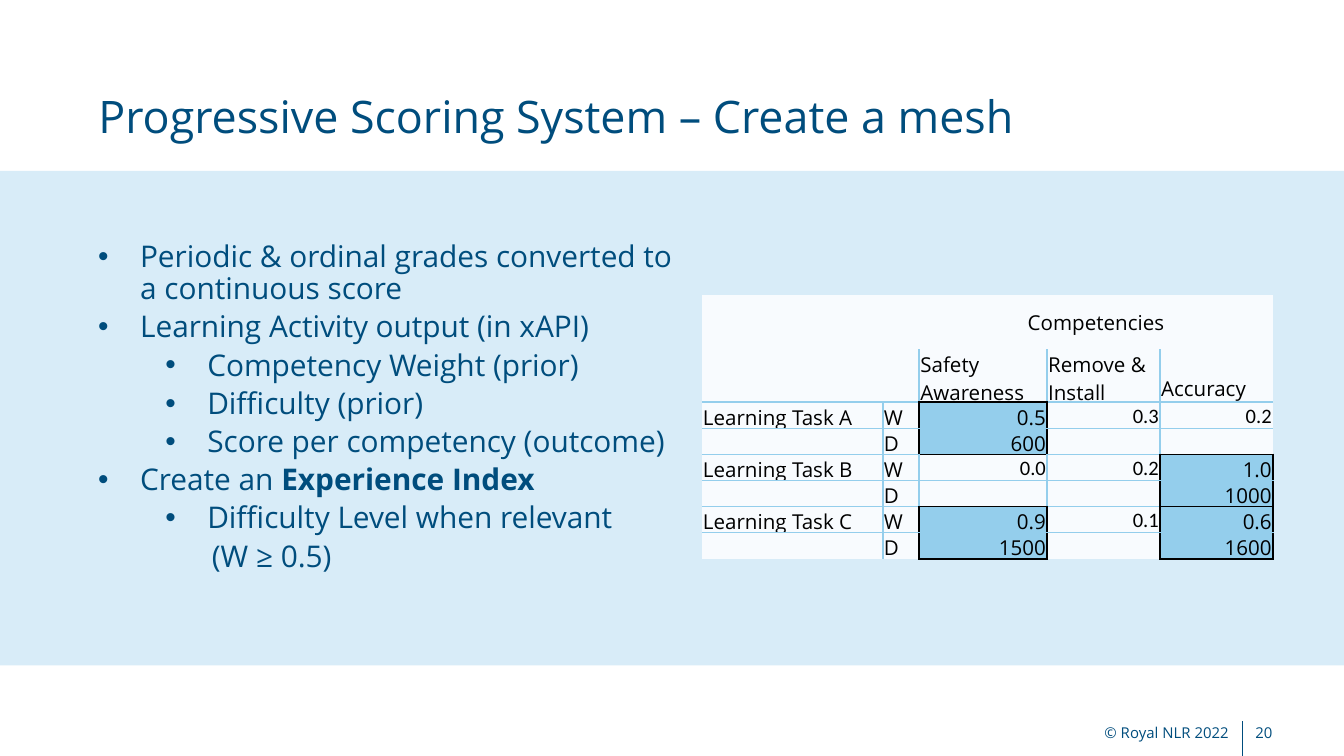
from lxml import etree
from pptx import Presentation
from pptx.dml.color import RGBColor
from pptx.enum.shapes import MSO_CONNECTOR, MSO_SHAPE
from pptx.enum.text import MSO_ANCHOR, PP_ALIGN
from pptx.oxml.ns import qn
from pptx.util import Pt

RECTANGLE = MSO_SHAPE.RECTANGLE
STRAIGHT = MSO_CONNECTOR.STRAIGHT
TOP, MIDDLE, BOTTOM = MSO_ANCHOR.TOP, MSO_ANCHOR.MIDDLE, MSO_ANCHOR.BOTTOM
LEFT, CENTER, RIGHT = PP_ALIGN.LEFT, PP_ALIGN.CENTER, PP_ALIGN.RIGHT

FONT, NUMBER_FONT = "Open Sans", "Calibri"
NAVY, BAND, BLACK = "004D7D", "D8ECF8", "000000"
CELL, HIGHLIGHT = "F8FBFE", "94CEEC"
TABLE_SIZE = 11

BULLETS = [
    (0, [("Periodic & ordinal grades converted to a continuous score", False)]),
    (0, [("Learning Activity output (in xAPI)", False)]),
    (1, [("Competency Weight (prior)", False)]),
    (1, [("Difficulty (prior)", False)]),
    (1, [("Score per competency (outcome)", False)]),
    (0, [("Create an ", False), ("Experience Index", True)]),
    (1, [("Difficulty Level when relevant", False)]),
    (None, [("(W ≥ 0.5)", False)]),
]
BULLET_INDENTS = {0: 22.5, 1: 58.5}
CONTINUATION_INDENT = 61

COLUMN_WIDTHS = [97, 19.5, 68.5, 60.5, 60.5]
ROW_HEIGHTS = [29, 28.5] + [14] * 6
ROWS = [
    ["", "", "Competencies", "", ""],
    ["", "", "Safety Awareness", "Remove & Install", "Accuracy"],
    ["Learning Task A", "W", "0.5", "0.3", "0.2"],
    ["", "D", "600", "", ""],
    ["Learning Task B", "W", "0.0", "0.2", "1.0"],
    ["", "D", "", "", "1000"],
    ["Learning Task C", "W", "0.9", "0.1", "0.6"],
    ["", "D", "1500", "", "1600"],
]
RELEVANT = {(1, 2), (2, 4), (3, 2), (3, 4)}
SIDES = {"lnL": (0, -1), "lnR": (0, 1), "lnT": (-1, 0), "lnB": (1, 0)}


def color(value):
    """Return the colour for a hex string."""
    return RGBColor.from_string(value)


def add_run(paragraph, text, size, fill=NAVY, font=FONT, bold=False):
    """Add one formatted run to a paragraph."""
    run = paragraph.add_run()
    run.text = text
    run.font.size = Pt(size)
    run.font.name = font
    run.font.bold = bold
    run.font.color.rgb = color(fill)


def add_band(slide):
    """Add the pale band behind the content."""
    shape = slide.shapes.add_shape(RECTANGLE, Pt(0), Pt(91.5), Pt(720), Pt(265))
    shape.shadow.inherit = False
    shape.fill.solid()
    shape.fill.fore_color.rgb = color(BAND)
    shape.line.fill.background()


def add_footer_line(slide):
    """Add the thin divider of the footer."""
    line = slide.shapes.add_connector(STRAIGHT, Pt(665.5), Pt(386.5), Pt(665.5), Pt(405))
    line.line.color.rgb = color(NAVY)
    line.line.width = Pt(0.25)
    etree.SubElement(line._element.spPr, qn("a:effectLst"))


def add_text_box(slide, left, top, width, height, anchor):
    """Add a wrapping text box and return its text frame."""
    shape = slide.shapes.add_textbox(Pt(left), Pt(top), Pt(width), Pt(height))
    shape.text_frame.word_wrap = True
    shape.text_frame.vertical_anchor = anchor
    return shape.text_frame


def add_footer(slide, text, left, width, alignment):
    """Add one footer text."""
    paragraph = add_text_box(slide, left, 381.5, width, 21.5, MIDDLE).paragraphs[0]
    paragraph.alignment = alignment
    add_run(paragraph, text, 8)


def set_title(slide, text):
    """Place and format the title."""
    title = slide.shapes.title
    title.left, title.top, title.width, title.height = Pt(45.5), Pt(47), Pt(637), Pt(36)
    title.text_frame.vertical_anchor = TOP
    paragraph = title.text_frame.paragraphs[0]
    paragraph.alignment = LEFT
    paragraph.line_spacing = 0.9
    add_run(paragraph, text, 24)


def set_indent(paragraph, level):
    """Give a paragraph the indent and bullet of its level."""
    properties = paragraph._p.get_or_add_pPr()
    if level is None:
        properties.set("marL", str(Pt(CONTINUATION_INDENT)))
        properties.set("indent", "0")
        return
    properties.set("marL", str(Pt(BULLET_INDENTS[level])))
    properties.set("indent", str(-Pt(BULLET_INDENTS[0])))
    etree.SubElement(properties, qn("a:buFont"), typeface="Arial")
    etree.SubElement(properties, qn("a:buChar"), char="•")


def add_bullets(slide):
    """Add the bulleted list."""
    frame = add_text_box(slide, 45.5, 126, 332, 232, TOP)
    for index, (level, runs) in enumerate(BULLETS):
        paragraph = frame.add_paragraph() if index else frame.paragraphs[0]
        set_indent(paragraph, level)
        paragraph.line_spacing = 0.9
        if index:
            paragraph.space_before = Pt(3.2)
        for text, bold in runs:
            add_run(paragraph, text, 16, bold=bold)


def is_relevant(row, column):
    """Tell whether a cell belongs to a relevant task and competency."""
    return (row // 2, column) in RELEVANT


def border_color(row, column, side):
    """Return the colour of one cell side, or None for no line."""
    row_step, column_step = SIDES[side]
    next_row, next_column = row + row_step, column + column_step
    relevant = is_relevant(row, column) or is_relevant(next_row, next_column)
    same_task = row // 2 == next_row // 2 and column == next_column
    if relevant and not same_task:
        return BLACK
    outside = not (0 < next_row < len(ROWS) and 0 <= next_column < len(COLUMN_WIDTHS))
    in_corner = row == next_row == 1 and max(column, next_column) < 2
    return None if row == 0 or outside or in_corner else HIGHLIGHT


def set_borders(cell, row, column):
    """Draw the four sides of a cell."""
    properties = cell._tc.get_or_add_tcPr()
    for index, side in enumerate(SIDES):
        value = border_color(row, column, side)
        line = etree.Element(qn(f"a:{side}"), w=str(Pt(1)))
        if value:
            fill = etree.SubElement(line, qn("a:solidFill"))
            etree.SubElement(fill, qn("a:srgbClr"), val=value)
        else:
            etree.SubElement(line, qn("a:noFill"))
        properties.insert(index, line)


def fill_cell(cell, row, column, text):
    """Write and format one table cell."""
    relevant = is_relevant(row, column)
    cell.margin_left = cell.margin_right = cell.margin_top = Pt(0.6)
    cell.margin_bottom = Pt(0)
    cell.vertical_anchor = BOTTOM if row else MIDDLE
    cell.fill.solid()
    cell.fill.fore_color.rgb = color(HIGHLIGHT if relevant else CELL)
    set_borders(cell, row, column)
    paragraph = cell.text_frame.paragraphs[0]
    is_number = row > 1 and column > 1
    paragraph.alignment = RIGHT if is_number else LEFT if row else CENTER
    if text:
        font = NUMBER_FONT if is_number and not relevant else FONT
        add_run(paragraph, text, TABLE_SIZE, BLACK, font)
    else:
        etree.SubElement(paragraph._p, qn("a:endParaRPr"), sz=str(TABLE_SIZE * 100))


def add_score_table(slide):
    """Add the table of tasks and competencies."""
    frame = slide.shapes.add_table(len(ROWS), len(COLUMN_WIDTHS), Pt(376), Pt(158),
                                   Pt(sum(COLUMN_WIDTHS)), Pt(sum(ROW_HEIGHTS)))
    table = frame.table
    table.first_row = table.horz_banding = False
    for column, width in zip(table.columns, COLUMN_WIDTHS):
        column.width = Pt(width)
    for row, height in zip(table.rows, ROW_HEIGHTS):
        row.height = Pt(height)
    for row, texts in enumerate(ROWS):
        for column, text in enumerate(texts):
            fill_cell(table.cell(row, column), row, column, text)
    table.cell(0, 2).merge(table.cell(0, 4))


def main():
    """Build and save the slide."""
    presentation = Presentation()
    presentation.slide_width, presentation.slide_height = Pt(720), Pt(405)
    slide = presentation.slides.add_slide(presentation.slide_layouts[5])
    add_footer_line(slide)
    add_band(slide)
    add_footer(slide, "© Royal NLR 2022", 317, 348.5, RIGHT)
    add_footer(slide, "20", 665.5, 33, LEFT)
    set_title(slide, "Progressive Scoring System – Create a mesh")
    add_bullets(slide)
    add_score_table(slide)
    presentation.save("out.pptx")


if __name__ == "__main__":
    main()
